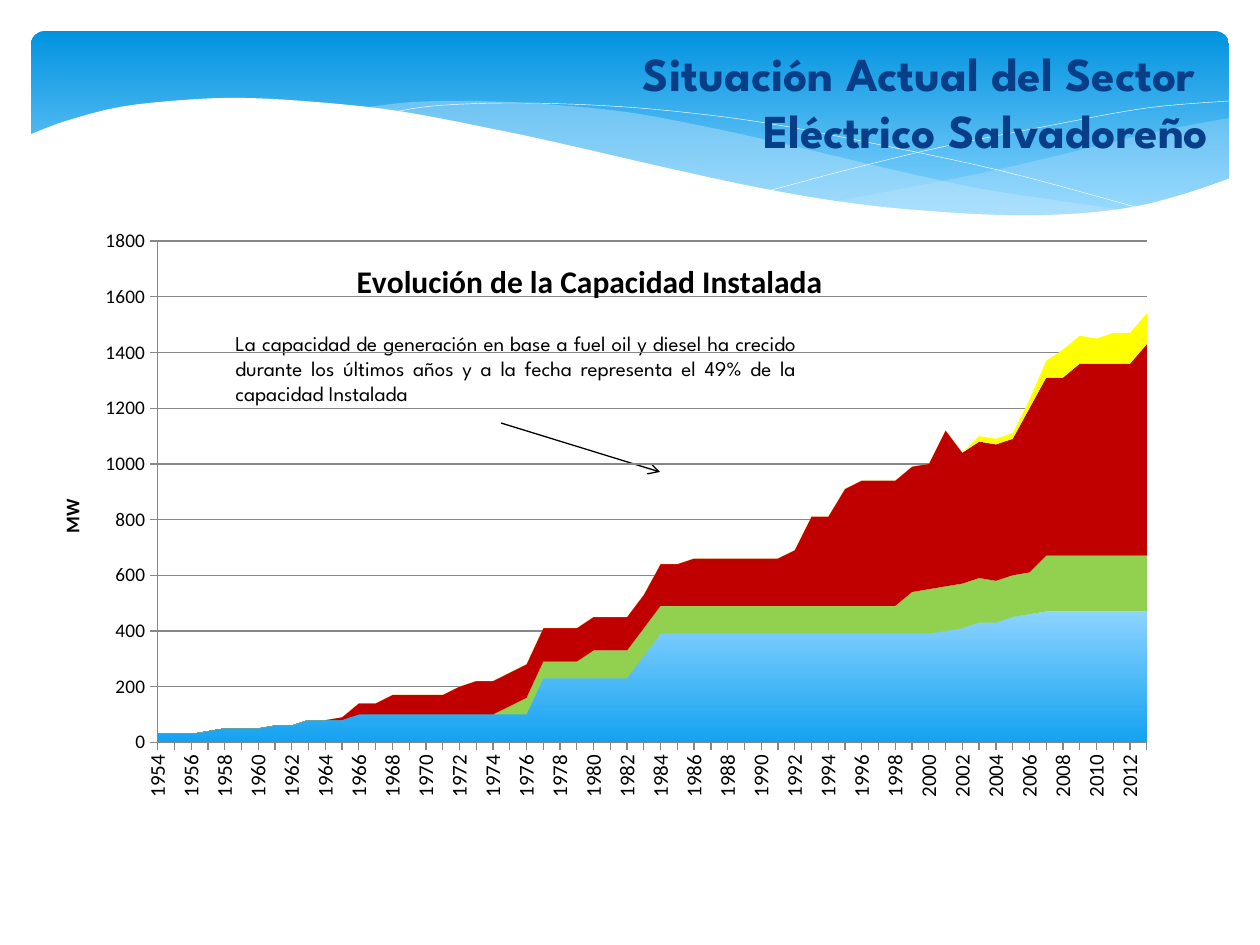
import pptx
import pptx.chart.data
import pptx.dml.color
import pptx.enum.chart
import pptx.enum.shapes
import pptx.enum.text
import pptx.oxml.ns
import pptx.util
from lxml import etree

SCALE = 914400 / 126
HEAD, BODY = "League Spartan", "Calibri"
GREY = "878787"
ALIGN = pptx.enum.text.PP_ALIGN
qn = pptx.oxml.ns.qn


def px(*nums):
    return [pptx.util.Emu(round(n * SCALE)) for n in nums]


def tint(code):
    return pptx.dml.color.RGBColor.from_string(code)


def style(font, size, color="000000", face=BODY, bold=False):
    font.size, font.name, font.bold = pptx.util.Pt(size), face, bold
    font.color.rgb = tint(color)


def write(frame, text, align=None, **form):
    frame.text = text
    for par in frame.paragraphs:
        par.alignment = align
        for run in par.runs:
            style(run.font, **form)


def paint(fill, color):
    """Fill with one colour, or top to bottom with (place, colour) stops."""
    if isinstance(color, str):
        fill.solid()
        fill.fore_color.rgb = tint(color)
        return
    fill.gradient()
    fill.gradient_angle = 270
    for stop, (spot, code) in zip(fill.gradient_stops, color):
        stop.position, stop.color.rgb = spot, tint(code)


def curve(points, steps=5):
    """Smooth path through the points (Catmull-Rom)."""
    ends = [points[0], *points, points[-1]]
    path = [points[0]]
    for quad in zip(ends, ends[1:], ends[2:], ends[3:]):
        for t in (n / steps for n in range(1, steps + 1)):
            path.append(tuple(
                (2 * q + (r - p) * t + (2 * p - 5 * q + 4 * r - s) * t ** 2
                 + (3 * q - p - 3 * r + s) * t ** 3) / 2 for p, q, r, s in zip(*quad)))
    return path


def place(node, **parts):
    """Give a chart part a manual layout."""
    for old in node.findall(qn("c:layout")):
        node.remove(old)
    layout = etree.Element(qn("c:layout"))
    man = etree.SubElement(layout, qn("c:manualLayout"))
    for tag, val in parts.items():
        etree.SubElement(man, qn("c:" + tag), val=str(val))
    text = node.find(qn("c:tx"))
    node.insert(0 if text is None else node.index(text) + 1, layout)


def clear():
    """Chart part properties with no fill and no line."""
    prop = etree.Element(qn("c:spPr"))
    etree.SubElement(prop, qn("a:noFill"))
    etree.SubElement(etree.SubElement(prop, qn("a:ln")), qn("a:noFill"))
    return prop


class Deck:
    def __init__(self):
        self.show = pptx.Presentation()
        self.show.slide_width, self.show.slide_height = px(1260, 945)
        self.slide = self.show.slides.add_slide(self.show.slide_layouts[5])
        self.shapes = self.slide.shapes

    def band(self, box, color):
        kind = pptx.enum.shapes.MSO_SHAPE.ROUNDED_RECTANGLE
        shape = self.shapes.add_shape(kind, *px(*box))
        shape.adjustments[0] = 0.07
        shape.shadow.inherit = False
        shape.line.fill.background()
        paint(shape.fill, color)

    def free(self, points, fill=None, alpha=100, line=None):
        first, *rest = [px(*p) for p in points]
        build = self.shapes.build_freeform(*first)
        build.add_line_segments(rest, close=fill is not None)
        shape = build.convert_to_shape()
        shape.shadow.inherit = False
        if fill:
            paint(shape.fill, fill)
            shape.line.fill.background()
            node = shape.element.spPr.find(".//" + qn("a:srgbClr"))
            etree.SubElement(node, qn("a:alpha"), val=str(alpha * 1000))
        else:
            shape.fill.background()
            shape.line.color.rgb = tint(line)
            shape.line.width = pptx.util.Pt(0.25)

    def title(self, box, text, **form):
        shape = self.shapes.title
        shape.left, shape.top, shape.width, shape.height = px(*box)
        shape.text_frame.vertical_anchor = pptx.enum.text.MSO_ANCHOR.MIDDLE
        write(shape.text_frame, text, **form)
        shape.element.getparent().append(shape.element)

    def text(self, box, text, **form):
        frame = self.shapes.add_textbox(*px(*box)).text_frame
        frame.word_wrap = True
        write(frame, text, **form)

    def arrow(self, ends, color):
        kind = pptx.enum.shapes.MSO_CONNECTOR.STRAIGHT
        line = self.shapes.add_connector(kind, *px(*ends))
        line.line.color.rgb = tint(color)
        line.line.width = pptx.util.Pt(0.75)
        prop = line.element.spPr
        etree.SubElement(prop.find(qn("a:ln")), qn("a:tailEnd"), type="arrow")
        etree.SubElement(prop, qn("a:effectLst"))

    def chart(self, box, names, rows, fills):
        data = pptx.chart.data.CategoryChartData()
        data.categories = names
        for num, row in enumerate(rows, 1):
            data.add_series(f"Series {num}", row)
        kind = pptx.enum.chart.XL_CHART_TYPE.AREA_STACKED
        chart = self.shapes.add_chart(kind, *px(*box), data).chart
        chart.has_legend = False
        style(chart.font, 10)
        for part, fill in zip(chart.plots[0].series, fills):
            paint(part.format.fill, fill)
        return chart

    def axis(self, axis, size):
        axis.major_tick_mark = pptx.enum.chart.XL_TICK_MARK.OUTSIDE
        style(axis.tick_labels.font, size)
        axis.format.line.color.rgb = tint(GREY)


def main():
    deck = Deck()
    # Banner: blue band, sheer waves, thin lines and the white wave below
    deck.band((31, 31, 1198, 197), [(0, "0293E0"), (0.9, "83D3FE")])
    deck.free(curve([(1229, 118), (1160, 131), (1085, 149), (982, 173), (833, 202)])
              + curve([(833, 202), (888, 208), (954, 214), (1026, 217), (1087, 214),
                       (1150, 204), (1230, 178)]), "C6E7FC", 29)
    deck.free(curve([(360, 108), (413, 102), (479, 101), (557, 105), (633, 113), (717, 129),
                     (793, 146), (890, 169), (977, 188), (1055, 200), (1125, 210)])
              + curve([(1125, 210), (1080, 215), (1017, 218), (942, 214), (857, 205), (757, 189),
                       (668, 170), (566, 146), (483, 127), (360, 108)]), "C6E7FC", 40)
    for points in ([(389, 113), (433, 106), (505, 103), (591, 105), (672, 111), (766, 123),
                    (876, 144), (1002, 171), (1143, 209)],
                   [(772, 190), (847, 170), (942, 147), (1053, 125), (1147, 108), (1229, 101)]):
        deck.free(curve(points), line="FFFFFF")
    deck.free(curve([(29, 135), (66, 121), (120, 107), (184, 100), (243, 98), (315, 102),
                     (398, 111), (493, 129), (563, 144), (667, 168), (760, 188), (842, 202),
                     (915, 210), (999, 215), (1071, 214), (1133, 207), (1184, 194), (1231, 178)])
              + [(1231, 282), (29, 282)], "FFFFFF")
    # Title, note and arrow
    deck.title((15, 37, 1206, 128), "Situación Actual del Sector \vEléctrico Salvadoreño",
               align=ALIGN.RIGHT, size=27, color="073E87", face=HEAD, bold=True)
    deck.text((223, 324, 586, 89),
              "La capacidad de generación en base a fuel oil y diesel ha crecido durante los "
              "últimos años y a la fecha representa el 49% de la capacidad Instalada",
              align=ALIGN.JUSTIFY, size=12, face=HEAD)
    deck.arrow((501, 423, 660, 472), "000000")
    # Installed capacity by year, as (value, years) runs
    runs = [[(30, 3), (40, 1), (50, 3), (60, 2), (80, 3), (100, 11), (230, 6), (310, 1),
             (390, 17), (400, 1), (410, 1), (430, 2), (450, 1), (460, 1), (470, 7)],
            [(0, 21), (30, 1), (60, 4), (100, 19), (150, 1), (160, 4), (150, 3), (200, 7)],
            [(0, 11), (10, 1), (40, 2), (70, 4), (100, 1), (120, 11), (150, 2), (170, 6),
             (200, 1), (320, 2), (420, 1), (450, 5), (560, 1), (470, 1), (490, 3), (590, 1),
             (640, 2), (690, 4), (760, 1)],
            [(0, 49), (20, 3), (30, 1), (60, 1), (100, 2), (90, 1), (110, 3)]]
    rows = [[val for val, count in row for _ in range(count)] for row in runs]
    chart = deck.chart((44, 204, 1137, 619), [str(y) for y in range(1954, 2014)], rows,
                       [[(0, "8CD3FF"), (1, "14A2F0")], "92D050", "C00000", "FFFF00"])
    # Axes and titles
    years, power = chart.category_axis, chart.value_axis
    deck.axis(years, 12)
    deck.axis(power, 11)
    power.minimum_scale, power.maximum_scale, power.major_unit = 0, 1800, 200
    power.tick_labels.number_format = "0"
    power.tick_labels.number_format_is_linked = False
    power.major_gridlines.format.line.color.rgb = tint(GREY)
    write(power.axis_title.text_frame, "MW", size=11, bold=True)
    write(chart.chart_title.text_frame, "Evolución de la Capacidad Instalada", size=18, bold=True)
    # Label turns, skipped years and layout
    body = chart.element.find(qn("c:chart"))
    plot, head = body.find(qn("c:plotArea")), body.find(qn("c:title"))
    base, side = plot.find(qn("c:catAx")), plot.find(qn("c:valAx"))
    label = side.find(qn("c:title"))
    for node in (base.find(qn("c:txPr")), label):
        turn = node.find(".//" + qn("a:bodyPr"))
        turn.set("rot", "-5400000")
        turn.set("vert", "horz")
    skip = etree.Element(qn("c:tickLblSkip"), val="2")
    base.find(qn("c:noMultiLvlLbl")).addprevious(skip)
    side.find(qn("c:crossBetween")).set("val", "midCat")
    head.find(qn("c:overlay")).set("val", "1")
    spot = {"xMode": "edge", "yMode": "edge"}
    place(head, **spot, x=0.27, y=0.08)
    place(label, **spot, x=0.01, y=0.47)
    place(plot, layoutTarget="inner", **spot, x=0.1, y=0.06, w=0.87, h=0.81)
    plot.append(clear())
    body.addnext(clear())
    deck.show.save("out.pptx")


if __name__ == "__main__":
    main()
